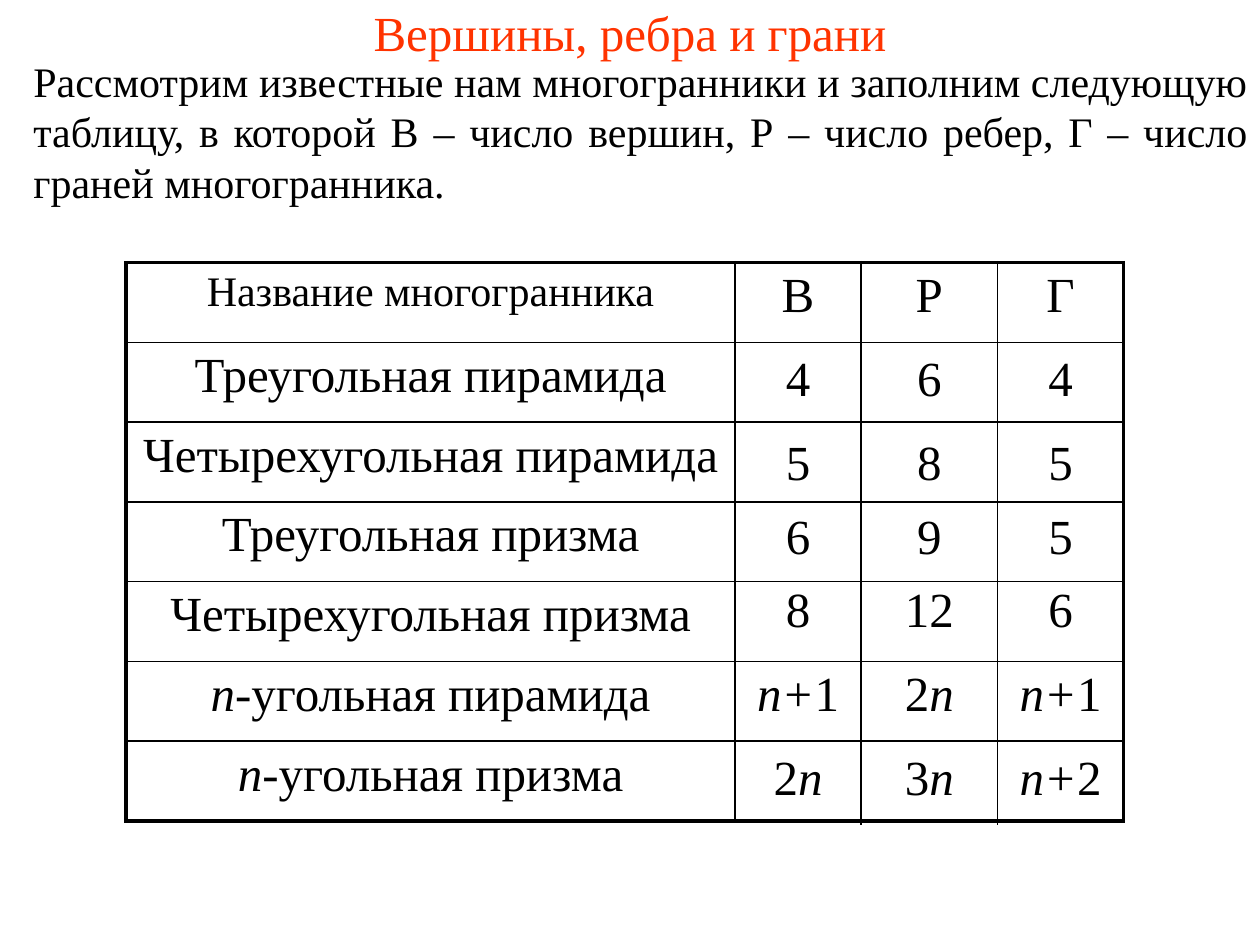
from lxml.etree import SubElement
from pptx import Presentation
from pptx.dml.color import RGBColor
from pptx.enum.text import MSO_ANCHOR, PP_ALIGN
from pptx.oxml.ns import qn
from pptx.util import Emu, Pt

SCALE = 7620  # EMU per px, 120 px to the inch
COLORS = {"title": "FF3300", "ink": "000000"}
COLS = [580, 120, 130, 120]
ROW = 76
LEFT, TOP = 120, 250

# Asterisks enclose italic text.
HEADS = ["Название многогранника", "В", "Р", "Г"]
SOLIDS = [
    ("Треугольная пирамида", 330, ["4", "6", "4"]),
    ("Четырехугольная пирамида", 410, ["5", "8", "5"]),
    ("Треугольная призма", 480, ["6", "9", "5"]),
    ("Четырехугольная призма", 550, ["8", "12", "6"]),
    ("*n-*угольная пирамида", 630, ["*n+*1", "2*n*", "*n+*1"]),
    ("*n-*угольная призма", 710, ["2*n*", "3*n*", "*n+*2"]),
]
INTRO = ("Рассмотрим известные нам многогранники и заполним следующую таблицу, "
         "в которой В *– *число вершин, Р* – *число ребер, Г – число граней "
         "многогранника.")


def px(n):
    return Emu(n * SCALE)


class Deck:
    font = "Times New Roman"

    def __init__(self, wide, high):
        self.prs = Presentation()
        self.prs.slide_width, self.prs.slide_height = px(wide), px(high)
        self.slide = self.prs.slides.add_slide(self.prs.slide_layouts[6])

    def words(self, frame, text, size, align=PP_ALIGN.CENTER, color="ink", gap=0.2):
        """Fill the first paragraph; gap is the space before, in parts of size."""
        par = frame.paragraphs[0]
        par.alignment = align
        par.space_before = Pt(round(size * gap, 1))
        par.font.name, par.font.size = self.font, Pt(size)
        par.font.color.rgb = RGBColor.from_string(COLORS[color])
        for i, part in enumerate(text.split("*")):
            if part:
                run = par.add_run()
                run.text = part
                if i % 2:
                    run.font.italic = True

    def text(self, box, text, size, anchor=MSO_ANCHOR.TOP, **style):
        frame = self.slide.shapes.add_textbox(*map(px, box)).text_frame
        frame.word_wrap = True
        frame.vertical_anchor = anchor
        self.words(frame, text, size, **style)

    def edge(self, cell, side, width):
        """Draw one cell border; a width of 0 hides it."""
        line = SubElement(cell._tc.get_or_add_tcPr(), qn("a:ln" + side), w=str(Pt(width)))
        if width:
            fill = SubElement(line, qn("a:solidFill"))
            SubElement(fill, qn("a:srgbClr"), val=COLORS["ink"])
        else:
            SubElement(line, qn("a:noFill"))

    def table(self, left, top, cols, rows, outer, rule):
        """Outer is the frame width, rule the width of inner row lines."""
        grid = self.slide.shapes.add_table(
            len(rows), len(cols), px(left), px(top),
            px(sum(cols)), px(ROW * len(rows))).table
        grid.first_row = grid.horz_banding = False
        for col, wide in zip(grid.columns, cols):
            col.width = px(wide)
        for r, row in enumerate(rows):
            grid.rows[r].height = px(ROW)
            for c, text in enumerate(row):
                cell = grid.cell(r, c)
                self.edge(cell, "L", 1 if c else outer)
                self.edge(cell, "R", 1 if c < len(cols) - 1 else outer)
                self.edge(cell, "T", rule if r else outer)
                self.edge(cell, "B", rule if r < len(rows) - 1 else outer)
                cell.fill.background()
                self.words(cell.text_frame, text, 24 if text == HEADS[0] else 28)


def main():
    deck = Deck(1200, 900)
    deck.text((90, 0, 1020, 60), "Вершины, ребра и грани", 28,
              anchor=MSO_ANCHOR.MIDDLE, color="title", gap=0)
    deck.text((20, 47, 1180, 156), INTRO, 24, align=PP_ALIGN.JUSTIFY, gap=0.5)
    names = [[name, "", "", ""] for name, _, _ in SOLIDS]
    deck.table(LEFT, TOP, COLS, [HEADS] + names, outer=2.25, rule=1)
    for _, top, counts in SOLIDS:
        deck.table(LEFT + COLS[0], top, COLS[1:], [counts], outer=0, rule=0)
    deck.prs.save("out.pptx")


if __name__ == "__main__":
    main()
